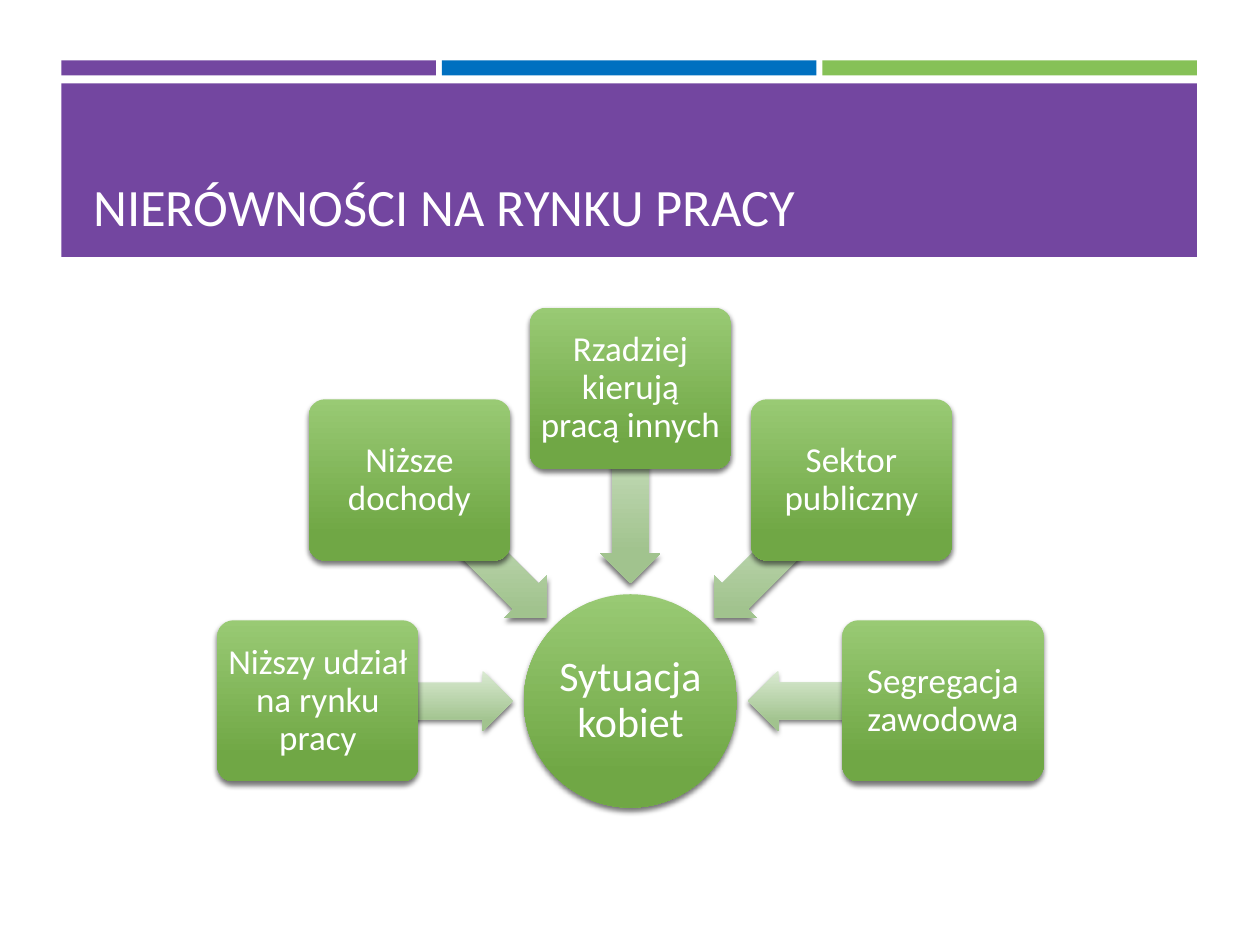
import math
from lxml import etree
from pptx import Presentation
from pptx import util as u
from pptx.dml import color
from pptx.enum import shapes, text
from pptx.oxml import ns

KIND = shapes.MSO_SHAPE


def write(shape, words, size, align=text.PP_ALIGN.CENTER,
          anchor=text.MSO_ANCHOR.MIDDLE, inset=None, space=None):
    frame = shape.text_frame
    frame.word_wrap = True
    frame.vertical_anchor = anchor
    if inset is not None:
        frame.margin_left = frame.margin_right = u.Cm(inset)
        frame.margin_top = frame.margin_bottom = u.Cm(inset)
    para = frame.paragraphs[0]
    para.alignment = align
    para.line_spacing = space
    run = para.add_run()
    run.text = words
    run.font.size = u.Pt(size)
    run.font.name = "Calibri"
    run.font.color.rgb = color.RGBColor.from_string("FFFFFF")


def draw(kind, x, y, w, h, *tones):
    """Add a shape: one tone is a flat fill, two are a shaded fill with a shadow."""
    shape = slide.shapes.add_shape(kind, u.Cm(x), u.Cm(y), u.Cm(w), u.Cm(h))
    shape.line.fill.background()
    shape.shadow.inherit = False
    tones = [color.RGBColor.from_string(tone) for tone in tones]
    if len(tones) == 1:
        shape.fill.solid()
        shape.fill.fore_color.rgb = tones[0]
        return shape
    shape.fill.gradient()
    shape.fill.gradient_angle = 270
    for stop, place, tone in zip(shape.fill.gradient_stops, (0, 0.84), tones):
        stop.position = place
        stop.color.rgb = tone
    props = shape._element.spPr
    props.find(ns.qn("a:gradFill")).set("rotWithShape", "0")
    shade = etree.SubElement(
        props.find(ns.qn("a:effectLst")), ns.qn("a:outerShdw"),
        blurRad=str(u.Pt(3)), dist=str(u.Pt(2)), dir="5400000", rotWithShape="0")
    black = etree.SubElement(shade, ns.qn("a:srgbClr"), val="000000")
    etree.SubElement(black, ns.qn("a:alpha"), val="55000")
    return shape


deck = Presentation()
deck.slide_width, deck.slide_height = u.Cm(25.4), u.Cm(19.05)
slide = deck.slides.add_slide(deck.slide_layouts[6])

# Header
for i, tone in enumerate(("7346A0", "0070C0", "86C157")):
    draw(KIND.RECTANGLE, 1.24 + 7.67 * i, 1.22, 7.55, 0.3, tone)
draw(KIND.RECTANGLE, 1.24, 1.68, 22.89, 3.5, "7346A0")
title = slide.shapes.add_textbox(u.Cm(1.63), u.Cm(1.9), u.Cm(22.2), u.Cm(3))
write(title, "NIERÓWNOŚCI NA RYNKU PRACY", 30,
      align=text.PP_ALIGN.LEFT, anchor=text.MSO_ANCHOR.BOTTOM)

# Hub with the causes on a half circle around it
mid_x, mid_y = 12.71, 14.13
green, pale = ("99CA74", "70A745"), ("DAEAD2", "A1C38E")
hub = 4.3
disc = draw(KIND.OVAL, mid_x - hub / 2, mid_y - hub / 2, hub, hub, *green)
write(disc, "Sytuacja kobiet", 24, inset=0.05, space=0.9)

far, near = 6.3, 4.34
box_w, box_h = 4.06, 3.25
arm_w, arm_h = 3.94, 1.22
causes = ("Niższy udział na rynku pracy", "Niższe dochody",
          "Rzadziej kierują pracą innych", "Sektor publiczny",
          "Segregacja zawodowa")
for i, cause in enumerate(causes):
    turn = 180 + 45 * i
    dx, dy = math.cos(math.radians(turn)), math.sin(math.radians(turn))
    arm = draw(KIND.LEFT_ARROW, mid_x + near * dx - arm_w / 2,
               mid_y + near * dy - arm_h / 2, arm_w, arm_h, *pale)
    arm.adjustments[0] = 0.6
    arm.adjustments[1] = 0.5
    arm.rotation = turn % 360
    box = draw(KIND.ROUNDED_RECTANGLE, mid_x + far * dx - box_w / 2,
               mid_y + far * dy - box_h / 2, box_w, box_h, *green)
    box.adjustments[0] = 0.1
    write(box, cause, 20, inset=0.1, space=0.9)

deck.save("out.pptx")
